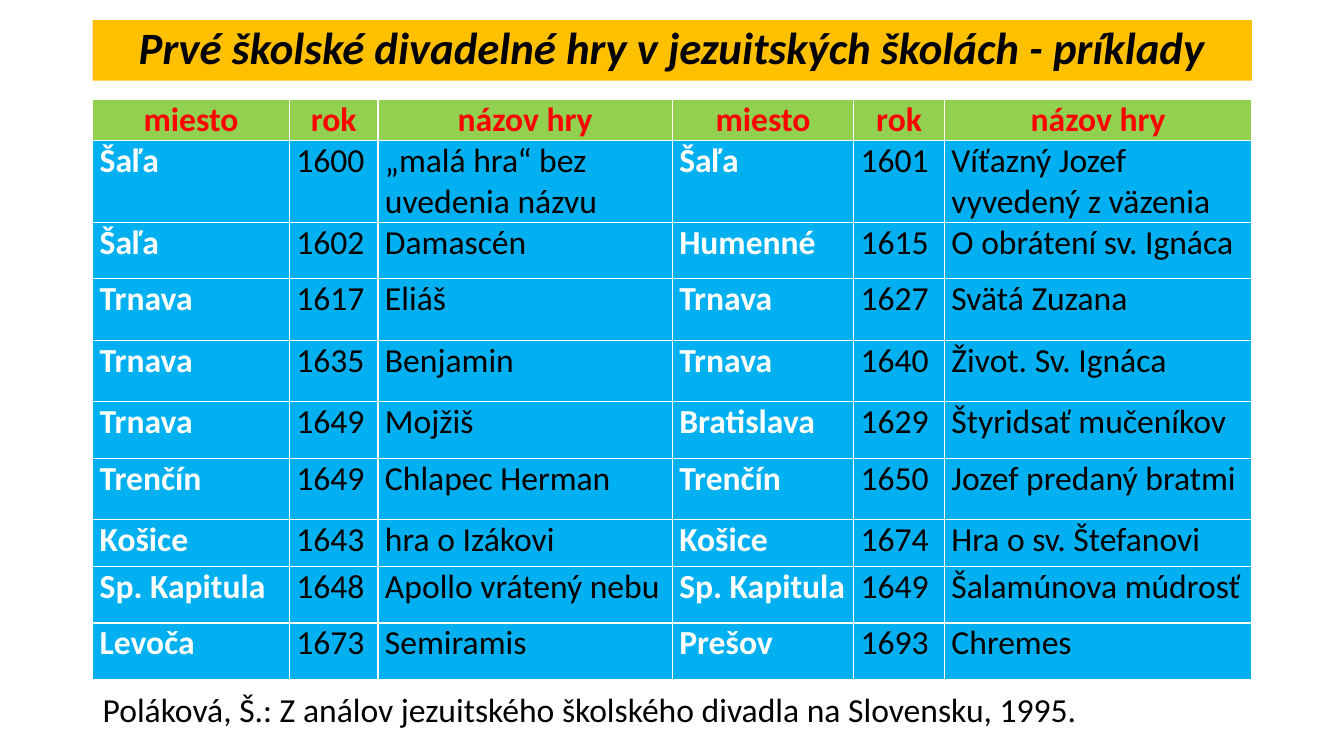
from pptx import Presentation
from pptx.dml.color import RGBColor
from pptx.enum import text as t
from pptx.util import Pt

BLACK, WHITE, RED = "000000", "FFFFFF", "FF0000"
GOLD, GREEN, BLUE = "FFC000", "92D050", "00B0F0"

# Lengths in points
LEFT, WIDTH = 66.24, 828
COLS = [140.4, 63.36, 210.24, 129.6, 64.8, 219.6]
ROWS = [28.8, 56.16, 39.6, 44.64, 43.2, 41.04, 43.2, 33.84, 40.32, 40.32]

HEAD = ["miesto", "rok", "názov hry"] * 2
PLAYS = [
    ["Šaľa", "1600", "„malá hra“ bez uvedenia názvu",
     "Šaľa", "1601", "Víťazný Jozef vyvedený z väzenia"],
    ["Šaľa", "1602", "Damascén", "Humenné", "1615", "O obrátení sv. Ignáca"],
    ["Trnava", "1617", "Eliáš", "Trnava", "1627", "Svätá Zuzana"],
    ["Trnava", "1635", "Benjamin", "Trnava", "1640", "Život. Sv. Ignáca"],
    ["Trnava", "1649", "Mojžiš", "Bratislava", "1629", "Štyridsať mučeníkov"],
    ["Trenčín", "1649", "Chlapec Herman", "Trenčín", "1650", "Jozef predaný bratmi"],
    ["Košice", "1643", "hra o Izákovi", "Košice", "1674", "Hra o sv. Štefanovi"],
    ["Sp. Kapitula", "1648", "Apollo vrátený nebu",
     "Sp. Kapitula", "1649", "Šalamúnova múdrosť"],
    ["Levoča", "1673", "Semiramis", "Prešov", "1693", "Chremes"],
]


def assign(item, values):
    for name, value in values.items():
        setattr(item, name, value)


def color_of(code):
    return RGBColor.from_string(code)


def paint(fill, code):
    fill.solid()
    fill.fore_color.rgb = color_of(code)


class Board:
    """Holds the text style and the current slide."""

    def __init__(self, slide, font="Calibri", size=24):
        self.slide, self.font, self.size = slide, font, size

    def label(self, frame, words, color=BLACK, para=None, **style):
        line = frame.paragraphs[0]
        assign(line, para or {})
        run = line.add_run()
        run.text = words
        assign(run.font, {"name": self.font, "size": Pt(self.size), **style})
        run.font.color.rgb = color_of(color)

    def title(self, words, top, height):
        shape = self.slide.shapes.title
        assign(shape, {"left": Pt(LEFT), "top": Pt(top),
                       "width": Pt(WIDTH), "height": Pt(height)})
        paint(shape.fill, GOLD)
        assign(shape.text_frame, {"auto_size": t.MSO_AUTO_SIZE.NONE,
                                  "vertical_anchor": t.MSO_ANCHOR.MIDDLE})
        self.label(shape.text_frame, words, size=Pt(32), bold=True, italic=True,
                   para={"alignment": t.PP_ALIGN.CENTER, "line_spacing": 0.9})

    def cell(self, cell, words, fill, color, bold, align):
        assign(cell, {"margin_left": Pt(5), "margin_right": Pt(5),
                      "margin_top": 0, "margin_bottom": 0})
        paint(cell.fill, fill)
        self.label(cell.text_frame, words, color, bold=bold,
                   para={"alignment": align, "space_after": Pt(6)})

    def table(self, top):
        grid = self.slide.shapes.add_table(
            len(ROWS), len(COLS), Pt(LEFT), Pt(top), Pt(WIDTH), Pt(sum(ROWS))).table
        grid.horz_banding = False
        for col, width in zip(grid.columns, COLS):
            col.width = Pt(width)
        for row, height in zip(grid.rows, ROWS):
            row.height = Pt(height)
        for c, words in enumerate(HEAD):
            self.cell(grid.cell(0, c), words, GREEN, RED, True, t.PP_ALIGN.CENTER)
        for r, play in enumerate(PLAYS, 1):
            for c, words in enumerate(play):
                place = c % 3 == 0
                self.cell(grid.cell(r, c), words, BLUE, WHITE if place else BLACK,
                          place, t.PP_ALIGN.LEFT)

    def note(self, words, top, width, height):
        box = self.slide.shapes.add_textbox(Pt(LEFT), Pt(top), Pt(width), Pt(height))
        assign(box.text_frame, {"word_wrap": True,
                                "auto_size": t.MSO_AUTO_SIZE.SHAPE_TO_FIT_TEXT})
        self.label(box.text_frame, words)


def main():
    deck = Presentation()
    assign(deck, {"slide_width": Pt(960), "slide_height": Pt(540)})
    board = Board(deck.slides.add_slide(deck.slide_layouts[5]))

    # Heading
    board.title("Prvé školské divadelné hry v jezuitských školách - príklady", 14.4, 43.2)
    # Plays by place and year
    board.table(71.28)
    # Source line
    board.note("Poláková, Š.: Z análov jezuitského školského divadla na Slovensku, 1995.",
               488.88, 835.2, 36)

    deck.save("out.pptx")


if __name__ == "__main__":
    main()
